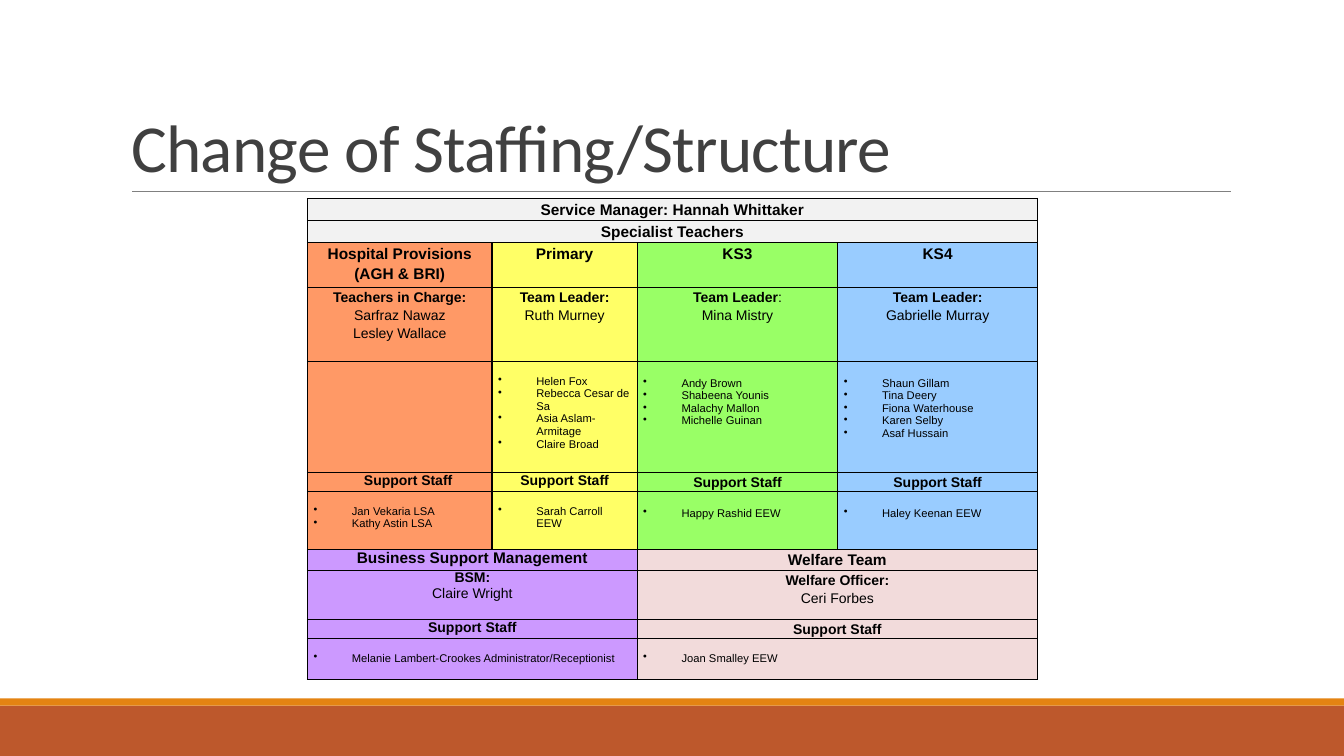
"""Build a slide with a staffing structure table."""
from lxml import etree
from pptx import Presentation
from pptx.dml.color import RGBColor
from pptx.enum.shapes import MSO_CONNECTOR, MSO_SHAPE
from pptx.enum.text import MSO_ANCHOR, PP_ALIGN
from pptx.oxml.ns import qn
from pptx.util import Inches, Pt

CENTER, LEFT = PP_ALIGN.CENTER, PP_ALIGN.LEFT
BOTTOM, TOP = MSO_ANCHOR.BOTTOM, MSO_ANCHOR.TOP
RECTANGLE, STRAIGHT = MSO_SHAPE.RECTANGLE, MSO_CONNECTOR.STRAIGHT

BLACK = RGBColor(0x00, 0x00, 0x00)
TITLE_GRAY = RGBColor(0x40, 0x40, 0x40)
RULE_GRAY = RGBColor(0x80, 0x80, 0x80)
RUST = RGBColor(0xBD, 0x58, 0x2C)
AMBER = RGBColor(0xE4, 0x83, 0x12)
PALE_GRAY = RGBColor(0xF2, 0xF2, 0xF2)
ORANGE = RGBColor(0xFF, 0x99, 0x66)
YELLOW = RGBColor(0xFF, 0xFF, 0x66)
GREEN = RGBColor(0x99, 0xFF, 0x66)
BLUE = RGBColor(0x99, 0xCC, 0xFF)
PURPLE = RGBColor(0xCC, 0x99, 0xFF)
PINK = RGBColor(0xF2, 0xDB, 0xDB)

SINGLE = [PALE_GRAY]
STAGES = [ORANGE, YELLOW, GREEN, BLUE]
TEAMS = [PURPLE, PINK]
SIZES = {"heading": 11, "leader": 10, "support": 10, "list": 8}
COLUMN_WIDTHS = [1.83, 1.44, 1.99, 1.98]

# Each band: height, kind, number of tightly spaced cells, fills, texts
BANDS = [
    (0.22, "heading", 0, SINGLE, ["Service Manager: Hannah Whittaker"]),
    (0.22, "heading", 0, SINGLE, ["Specialist Teachers"]),
    (0.44, "heading", 0, STAGES,
     ["Hospital Provisions (AGH & BRI)", "Primary", "KS3", "KS4"]),
    (0.74, "leader", 0, STAGES,
     ["Teachers in Charge:\nSarfraz Nawaz\nLesley Wallace",
      "Team Leader:\nRuth Murney",
      "Team Leader\nMina Mistry",
      "Team Leader:\nGabrielle Murray"]),
    (1.1, "list", 2, STAGES,
     ["",
      "Helen Fox\nRebecca Cesar de Sa\nAsia Aslam-Armitage\nClaire Broad",
      "Andy Brown\nShabeena Younis\nMalachy Mallon\nMichelle Guinan",
      "Shaun Gillam\nTina Deery\nFiona Waterhouse\nKaren Selby\nAsaf Hussain"]),
    (0.19, "support", 2, STAGES, ["Support Staff"] * 4),
    (0.57, "list", 2, STAGES,
     ["Jan Vekaria LSA\nKathy Astin LSA", "Sarah Carroll EEW",
      "Happy Rashid EEW", "Haley Keenan EEW"]),
    (0.21, "heading", 1, TEAMS, ["Business Support Management", "Welfare Team"]),
    (0.49, "leader", 1, TEAMS,
     ["BSM:\nClaire Wright", "Welfare Officer:\nCeri Forbes"]),
    (0.19, "support", 1, TEAMS, ["Support Staff"] * 2),
    (0.4, "list", 2, TEAMS,
     ["Melanie Lambert-Crookes Administrator/Receptionist", "Joan Smalley EEW"]),
]


def add_borders(cell):
    """Draw a thin black line on all four sides of a cell."""
    properties = cell._tc.get_or_add_tcPr()
    for side in ("a:lnL", "a:lnR", "a:lnT", "a:lnB"):
        line = etree.SubElement(properties, qn(side), w=str(Pt(1)))
        solid = etree.SubElement(line, qn("a:solidFill"))
        etree.SubElement(solid, qn("a:srgbClr"), val=str(BLACK))


def write_cell(cell, kind, text, tight):
    """Write the lines of a cell in the style of its band."""
    cell.margin_left = cell.margin_right = Inches(0.06)
    cell.margin_top = cell.margin_bottom = 0
    cell.vertical_anchor = TOP
    if kind == "list":
        cell.margin_top = Inches(0.13 if tight else 0.15)
    cell.text_frame.text = text
    for index, para in enumerate(cell.text_frame.paragraphs):
        para.font.size = Pt(SIZES[kind])
        if kind == "list":
            para.alignment = LEFT
            if text:
                properties = para._p.get_or_add_pPr()
                properties.set("marL", str(Inches(0.38)))
                properties.set("indent", str(Inches(-0.38)))
                bullet = etree.Element(qn("a:buChar"), char="•")
                properties.insert(0, bullet)
        else:
            para.alignment = CENTER
            para.line_spacing = 1.0 if tight else 1.15
        for span in para.runs:
            span.font.name = "Arial"
            span.font.size = Pt(SIZES[kind])
            span.font.color.rgb = BLACK
            span.font.bold = kind != "list" and (kind != "leader" or index == 0)


deck = Presentation()
deck.slide_width, deck.slide_height = Inches(13.33), Inches(7.5)
page = deck.slides.add_slide(deck.slide_layouts[5])

for top, height, color in ((7, 0.5, RUST), (6.93, 0.07, AMBER)):
    strip = page.shapes.add_shape(
        RECTANGLE, 0, Inches(top), deck.slide_width, Inches(height))
    strip.shadow.inherit = False
    strip.fill.solid()
    strip.fill.fore_color.rgb = color
    strip.line.fill.background()

rule = page.shapes.add_connector(
    STRAIGHT, Inches(1.31), Inches(1.9), Inches(12.21), Inches(1.9))
rule.line.color.rgb = RULE_GRAY
rule.line.width = Pt(0.5)
etree.SubElement(rule._element.spPr, qn("a:effectLst"))

title = page.shapes.title
title.left, title.top = Inches(1.2), Inches(0.31)
title.width, title.height = Inches(11), Inches(1.59)
title.text_frame.text = "Change of Staffing/Structure"
title.text_frame.vertical_anchor = BOTTOM
heading = title.text_frame.paragraphs[0]
heading.alignment = LEFT
heading.line_spacing = 0.85
heading_span = heading.runs[0]
heading_span.font.name = "Calibri"
heading_span.font.size = Pt(48)
heading_span.font.color.rgb = TITLE_GRAY
heading_span._r.get_or_add_rPr().set("spc", "-50")

frame = page.shapes.add_table(
    len(BANDS), len(COLUMN_WIDTHS), Inches(3.05), Inches(1.97),
    Inches(sum(COLUMN_WIDTHS)), Inches(sum(band[0] for band in BANDS)))
table = frame.table
table.first_row = table.horz_banding = False
for column, width in zip(table.columns, COLUMN_WIDTHS):
    column.width = Inches(width)

for row, (height, kind, tight_count, fills, texts) in enumerate(BANDS):
    table.rows[row].height = Inches(height)
    reach = len(COLUMN_WIDTHS) // len(texts)
    for column in range(len(COLUMN_WIDTHS)):
        cell = table.cell(row, column)
        add_borders(cell)
        cell.fill.solid()
        cell.fill.fore_color.rgb = fills[column // reach]
    for index, text in enumerate(texts):
        first = index * reach
        cell = table.cell(row, first)
        if reach > 1:
            cell.merge(table.cell(row, first + reach - 1))
        write_cell(cell, kind, text, index < tight_count)

hospital_support = table.cell(5, 0).text_frame.paragraphs[0]
hospital_support.alignment = LEFT
hospital_support._p.get_or_add_pPr().set("marL", str(Inches(0.5)))

colon = table.cell(3, 2).text_frame.paragraphs[0].add_run()
colon.text = ":"
colon.font.name = "Arial"
colon.font.size = Pt(10)
colon.font.color.rgb = BLACK

deck.save("out.pptx")
